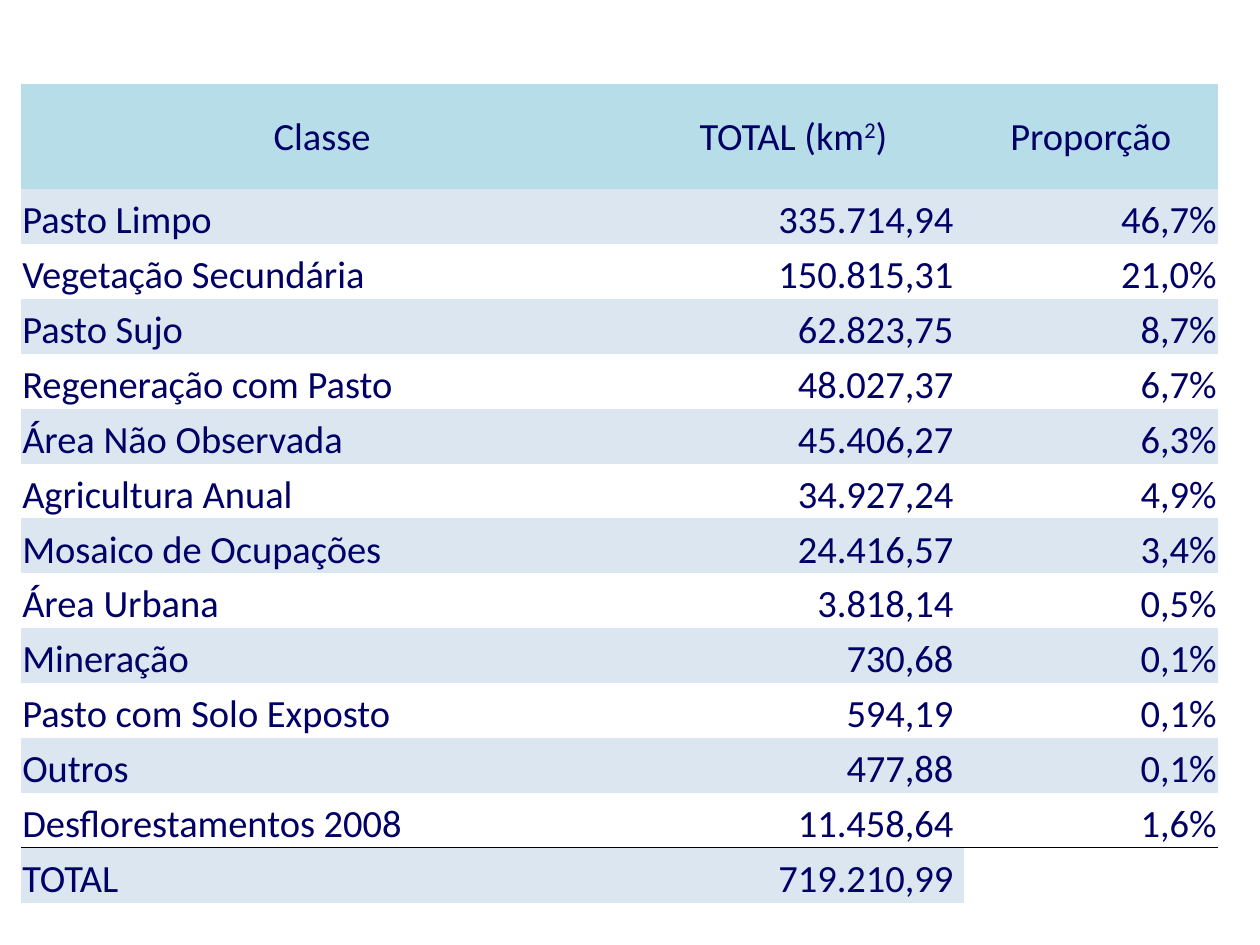
from lxml import etree
from pptx import Presentation
from pptx.dml.color import RGBColor
from pptx.enum import text
from pptx.oxml import ns
from pptx.util import Pt

NAVY, HEADER, BAND, BLACK = "000066", "B7DEE8", "DCE6F1", "000000"
NO_STYLE = "{2D5ABB26-0587-4C30-8999-92F81FD0307C}"
LEFT, CENTER, RIGHT = text.PP_ALIGN.LEFT, text.PP_ALIGN.CENTER, text.PP_ALIGN.RIGHT

COLUMN_WIDTHS = (344.2, 194.4, 145.4)
HEADER_HEIGHT = 60.2
HEADINGS = ("Classe", "TOTAL (km²)", "Proporção")
LAND_USE = (
    ("Pasto Limpo", "335.714,94", "46,7%"),
    ("Vegetação Secundária", "150.815,31", "21,0%"),
    ("Pasto Sujo", "62.823,75", "8,7%"),
    ("Regeneração com Pasto", "48.027,37", "6,7%"),
    ("Área Não Observada", "45.406,27", "6,3%"),
    ("Agricultura Anual", "34.927,24", "4,9%"),
    ("Mosaico de Ocupações", "24.416,57", "3,4%"),
    ("Área Urbana", "3.818,14", "0,5%"),
    ("Mineração", "730,68", "0,1%"),
    ("Pasto com Solo Exposto", "594,19", "0,1%"),
    ("Outros", "477,88", "0,1%"),
    ("Desflorestamentos 2008", "11.458,64", "1,6%"),
    ("TOTAL", "719.210,99", ""),
)


def rgb(value):
    return RGBColor.from_string(value)


def set_border(cell, side, color, width):
    """Draw one cell side; border elements come before the fill."""
    ln = etree.Element(ns.qn(f"a:{side}"), w=str(Pt(width)))
    fill = etree.SubElement(ln, ns.qn("a:solidFill"))
    etree.SubElement(fill, ns.qn("a:srgbClr"), val=color)
    cell._tc.get_or_add_tcPr().insert(0, ln)


def write_cell(cell, content, align, anchor, right=0.75):
    cell.margin_left = cell.margin_top = Pt(0.75)
    cell.margin_right, cell.margin_bottom = Pt(right), 0
    cell.vertical_anchor = anchor
    p = cell.text_frame.paragraphs[0]
    p.alignment = align
    p.font.size, p.font.name, p.font.color.rgb = Pt(22), "Calibri", rgb(NAVY)
    base, squared, rest = content.partition("²")
    p.add_run().text = base
    if squared:
        r = p.add_run()
        r.text = "2"
        r.font._element.set("baseline", "30000")
        p.add_run().text = rest


def fill_cell(cell, color):
    if color:
        cell.fill.solid()
        cell.fill.fore_color.rgb = rgb(color)
    else:
        cell.fill.background()


def add_land_use_table(slide, left, top, width, height):
    frame = slide.shapes.add_table(len(LAND_USE) + 1, len(HEADINGS),
                                   Pt(left), Pt(top), Pt(width), Pt(height))
    table = frame.table
    table._tbl.tblPr.find(ns.qn("a:tableStyleId")).text = NO_STYLE
    table.first_row = table.horz_banding = False
    for column, column_width in zip(table.columns, COLUMN_WIDTHS):
        column.width = Pt(column_width)
    row_height = round((height - HEADER_HEIGHT) / len(LAND_USE), 2)
    for i, row in enumerate(table.rows):
        row.height = Pt(row_height if i else HEADER_HEIGHT)

    # Header row
    for cell, heading in zip(table.rows[0].cells, HEADINGS):
        write_cell(cell, heading, CENTER, text.MSO_ANCHOR.MIDDLE)
        fill_cell(cell, HEADER)

    # Banded body rows; figures in km² stand clear of the column edge
    styles = ((LEFT, 0.75), (RIGHT, 5.75), (RIGHT, 0.75))
    for i, values in enumerate(LAND_USE):
        for cell, value, (align, right) in zip(table.rows[i + 1].cells, values, styles):
            if value:
                write_cell(cell, value, align, text.MSO_ANCHOR.BOTTOM, right)
            fill_cell(cell, BAND if value and i % 2 == 0 else None)

    # Rule above the total
    last = len(LAND_USE)
    for row, side in ((last - 1, "lnB"), (last, "lnT")):
        for cell in table.rows[row].cells:
            set_border(cell, side, BLACK, 1)


def main():
    prs = Presentation()
    prs.slide_width, prs.slide_height = Pt(720), Pt(540)
    slide = prs.slides.add_slide(prs.slide_layouts[6])
    add_land_use_table(slide, 12, 48, 684, 468)
    prs.save("out.pptx")


if __name__ == "__main__":
    main()
